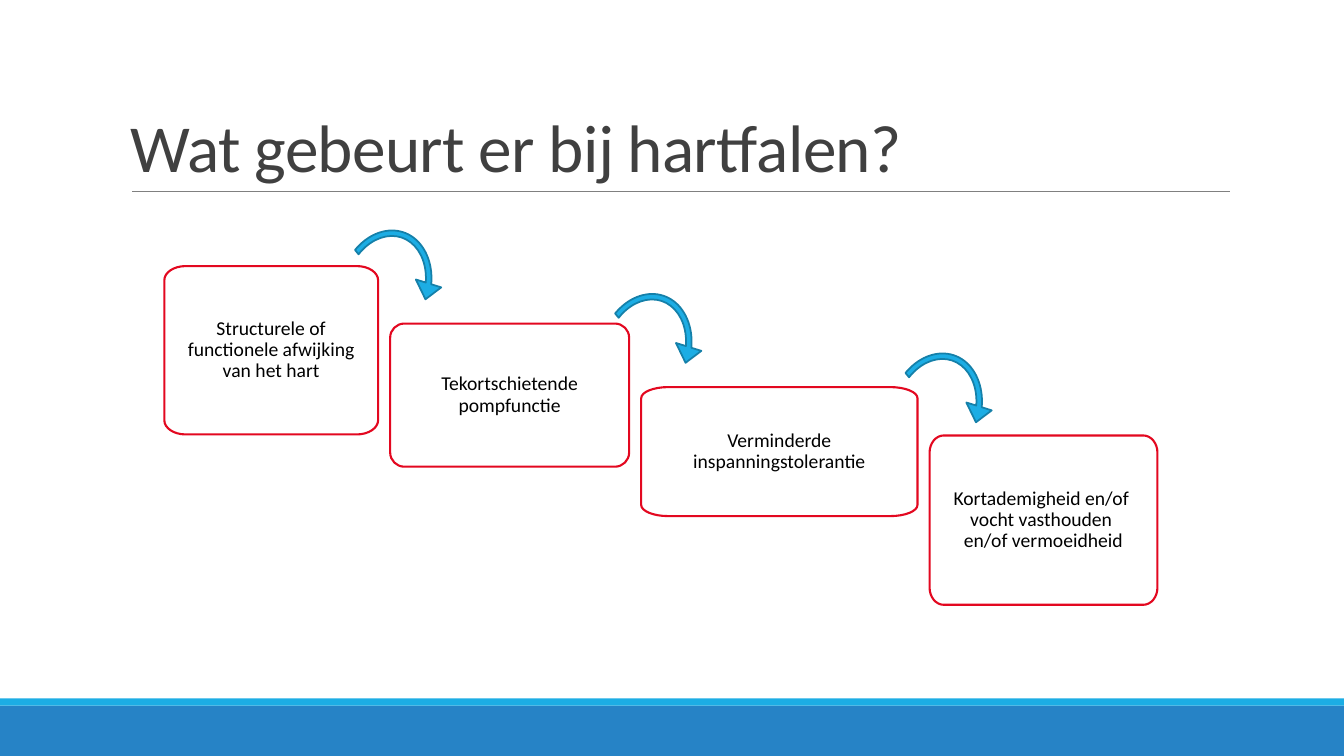
from lxml import etree
from pptx import Presentation
from pptx.dml.color import RGBColor
from pptx.enum.shapes import MSO_CONNECTOR, MSO_SHAPE
from pptx.enum.text import MSO_ANCHOR, PP_ALIGN
from pptx.oxml.ns import qn
from pptx.util import Inches, Pt

RECT, ARROW = MSO_SHAPE.RECTANGLE, MSO_SHAPE.CIRCULAR_ARROW
STRAIGHT = MSO_CONNECTOR.STRAIGHT
MIDDLE, BOTTOM = MSO_ANCHOR.MIDDLE, MSO_ANCHOR.BOTTOM
LEFT, CENTER = PP_ALIGN.LEFT, PP_ALIGN.CENTER

BLUE = RGBColor(0x26, 0x83, 0xC6)
CYAN = RGBColor(0x1C, 0xAD, 0xE4)
DARK_CYAN = RGBColor(0x15, 0x80, 0xA9)
RED = RGBColor(0xE3, 0x08, 0x20)
GREY = RGBColor(0x80, 0x80, 0x80)
DARK_GREY = RGBColor(0x40, 0x40, 0x40)
BLACK = RGBColor(0, 0, 0)
WHITE = RGBColor(0xFF, 0xFF, 0xFF)


def paint(sp, fill, line=None, width=0):
    sp.shadow.inherit = False
    sp.fill.solid()
    sp.fill.fore_color.rgb = fill
    if line is None:
        sp.line.fill.background()
    else:
        sp.line.color.rgb = line
        sp.line.width = Pt(width)


def write(sp, text, anchor, inset, para, font):
    tf = sp.text_frame
    tf.word_wrap = True
    tf.vertical_anchor = anchor
    for side, value in inset.items():
        setattr(tf, f"margin_{side}", Inches(value))
    p = tf.paragraphs[0]
    p.text = text
    for name, value in para.items():
        setattr(p, name, value)
    for r in p.runs:
        r.font.name = "Calibri"
        r.font.size = Pt(font["size"])
        r.font.color.rgb = font["color"]
        if "spacing" in font:
            r._r.get_or_add_rPr().set("spc", str(font["spacing"]))


prs = Presentation()
prs.slide_width, prs.slide_height = Inches(13.33), Inches(7.5)
s = prs.slides.add_slide(prs.slide_layouts[6])

# Footer bars
for top, height, color in [(7, 0.5, BLUE), (6.93, 0.07, CYAN)]:
    bar = s.shapes.add_shape(RECT, 0, Inches(top), prs.slide_width, Inches(height))
    paint(bar, color)

# Title and rule below it
rule = s.shapes.add_connector(STRAIGHT, Inches(1.31), Inches(1.9), Inches(12.2), Inches(1.9))
rule.line.color.rgb = GREY
rule.line.width = Pt(0.5)
etree.SubElement(rule._element.spPr, qn("a:effectLst"))

title = s.shapes.add_textbox(Inches(1.2), Inches(0.31), Inches(11), Inches(1.59))
write(title, "Wat gebeurt er bij hartfalen?", BOTTOM,
      {"left": 0.1, "right": 0.1, "top": 0.05, "bottom": 0.05},
      {"alignment": LEFT, "line_spacing": 0.85},
      {"size": 48, "color": DARK_GREY, "spacing": -50})

# Steps: left, top, width, height, corner radii across and down, inset, text
steps = [
    (1.63, 2.64, 2.12, 1.67, 0.21, 0.14, 0.12,
     "Structurele of functionele afwijking van het hart"),
    (3.87, 3.21, 2.37, 1.42, 0.14, 0.14, 0.11, "Tekortschietende pompfunctie"),
    (6.36, 3.84, 2.74, 1.28, 0.27, 0.11, 0.12, "Verminderde inspanningstolerantie"),
    (9.22, 4.32, 2.26, 1.68, 0.14, 0.17, 0.11,
     "Kortademigheid en/of \nvocht vasthouden \nen/of vermoeidheid"),
]
ROUNDING = 0.55  # share of the way from a curve's end to its corner
for left, top, width, height, rx, ry, inset, text in steps:
    right, bottom = left + width, top + height
    points = [(Inches(x), Inches(y)) for x, y in [
        (left, top + ry), (left + rx, top), (right - rx, top), (right, top + ry),
        (right, bottom - ry), (right - rx, bottom), (left + rx, bottom), (left, bottom - ry)]]
    outline = s.shapes.build_freeform(*points[0])
    outline.add_line_segments(points[1:] + points[:1], close=True)
    box = outline.convert_to_shape()

    # Every other segment becomes a rounded corner
    w, h = box.width, box.height
    segments = list(box._element.iter(qn("a:lnTo")))
    for segment, corner in zip(segments[::2], [(0, 0), (w, 0), (w, h), (0, h)]):
        ends = (segment.getprevious()[0], segment[0])
        segment.tag = qn("a:cubicBezTo")
        for i, end in enumerate(ends):
            control = etree.Element(qn("a:pt"))
            for axis, target in zip("xy", corner):
                value = int(end.get(axis))
                control.set(axis, str(round(value + ROUNDING * (target - value))))
            segment.insert(i, control)

    paint(box, WHITE, RED, 1.5)
    write(box, text, MIDDLE, dict.fromkeys(("left", "right", "top", "bottom"), inset),
          {"alignment": CENTER, "line_spacing": 0.9, "space_after": Pt(5.9)},
          {"size": 14, "color": BLACK})

# Curved arrows between the steps
for left, top in [(3.27, 2.17), (5.85, 2.8), (8.73, 3.39)]:
    arrow = s.shapes.add_shape(ARROW, Inches(left), Inches(top), Inches(1.1), Inches(1.35))
    arrow.rotation = 198.3
    for i, value in enumerate([0.05, 13.02, 94.33, 19.44, 0.12]):
        arrow.adjustments[i] = value
    paint(arrow, CYAN, DARK_CYAN, 1.25)

prs.save("out.pptx")
